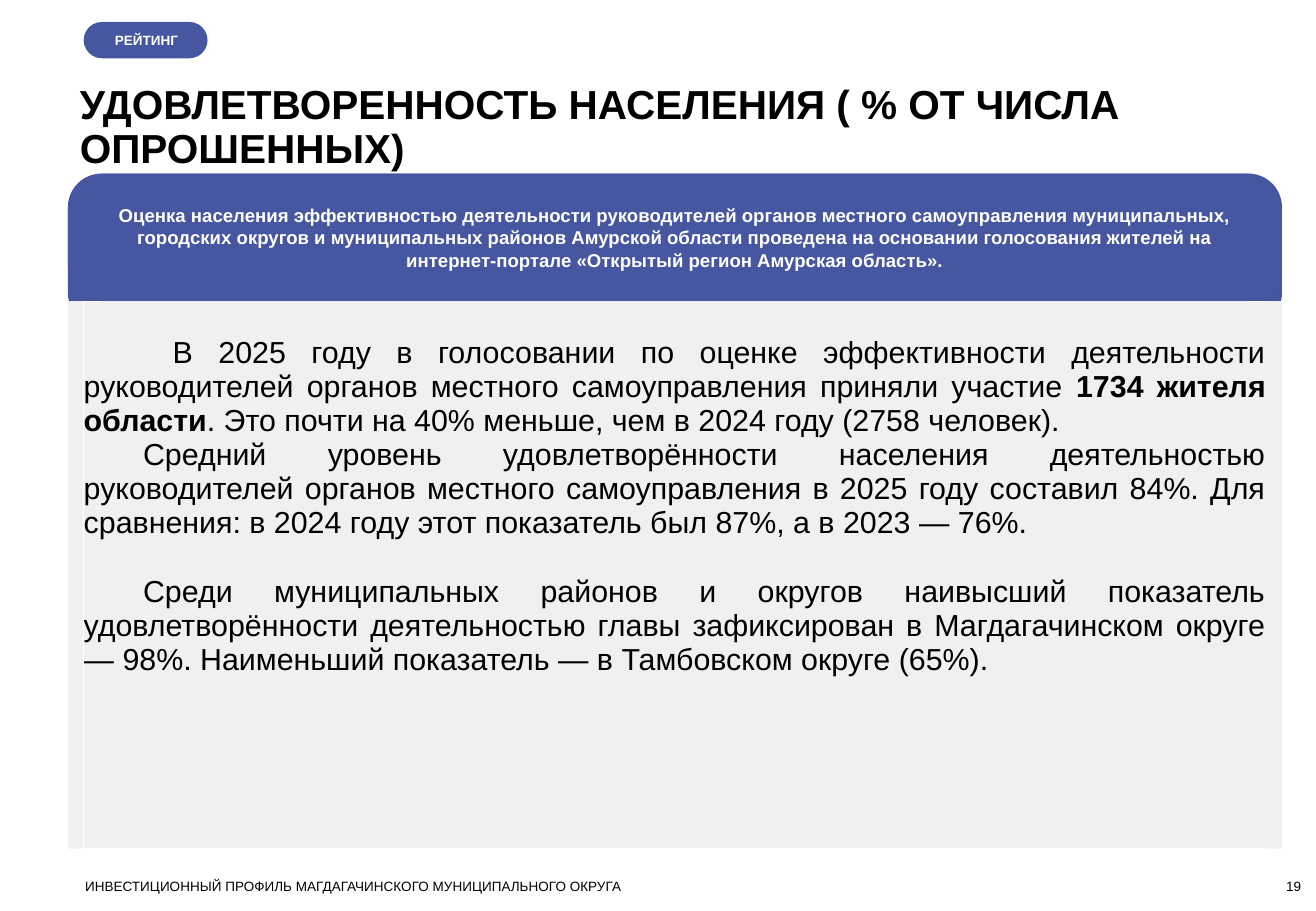
"""Builds the slide on how satisfied residents are with local leaders."""
from lxml.etree import SubElement
from pptx import Presentation
from pptx.dml.color import RGBColor
from pptx.enum.shapes import MSO_SHAPE
from pptx.enum.text import MSO_ANCHOR, PP_ALIGN
from pptx.oxml.ns import qn
from pptx.util import Cm, Pt

COLORS = {"blue": "4756A0", "deep": "46559F", "grey": "F0F0F0",
          "white": "FFFFFF", "black": "000000"}
FONT = "Arial"
TAG = "РЕЙТИНГ"
TITLE = "УДОВЛЕТВОРЕННОСТЬ НАСЕЛЕНИЯ ( % ОТ ЧИСЛА ОПРОШЕННЫХ)"
FOOTER = "ИНВЕСТИЦИОННЫЙ ПРОФИЛЬ МАГДАГАЧИНСКОГО МУНИЦИПАЛЬНОГО ОКРУГА"
PAGE = "19"
INTRO = ("Оценка населения эффективностью деятельности руководителей органов "
         "местного самоуправления муниципальных, городских округов и "
         "муниципальных районов Амурской области проведена на основании "
         "голосования жителей на интернет-портале «Открытый регион Амурская "
         "область».")
BODY = [
    {"indent": 1.86, "before": 0, "parts": [
        ("В 2025 году в голосовании по оценке эффективности деятельности "
         "руководителей органов местного самоуправления приняли участие ", False),
        ("1734 жителя области", True),
        (". Это почти на 40% меньше, чем в 2024 году (2758 человек).", False)]},
    {"indent": 1.24, "before": 0, "parts": [
        ("Средний уровень удовлетворённости населения деятельностью "
         "руководителей органов местного самоуправления в 2025 году составил "
         "84%. Для сравнения: в 2024 году этот показатель был 87%, а в 2023 — "
         "76%.", False)]},
    {"indent": 1.24, "before": 20.5, "parts": [
        ("Среди муниципальных районов и округов наивысший показатель "
         "удовлетворённости деятельностью главы зафиксирован в Магдагачинском "
         "округе — 98%. Наименьший показатель — в Тамбовском округе (65%).",
         False)]},
]
LEFT, WIDTH = 1.42, 25.38
TOP, SPLIT, BOTTOM = 3.63, 6.3, 17.75
INSET = (0.25, 0.13, 0.25, 0.13)
NONE = (0, 0, 0, 0)


def paint(font, size, color, bold=False):
    font.name, font.size, font.bold = FONT, Pt(size), bold
    font.color.rgb = RGBColor.from_string(COLORS[color])


def block(slide, kind, box, color, round_by=None):
    shape = slide.shapes.add_shape(kind, *map(Cm, box))
    shape.shadow.inherit = False
    shape.fill.solid()
    shape.fill.fore_color.rgb = RGBColor.from_string(COLORS[color])
    shape.line.fill.background()
    if round_by is not None:
        shape.adjustments[0] = round_by
    return shape


def write(shape, text, size, color, bold=False, align=PP_ALIGN.LEFT,
          anchor=MSO_ANCHOR.MIDDLE, inset=INSET, lead=None):
    frame = shape.text_frame
    frame.word_wrap = True
    frame.vertical_anchor = anchor
    (frame.margin_left, frame.margin_top,
     frame.margin_right, frame.margin_bottom) = map(Cm, inset)
    frame.text = text
    para = frame.paragraphs[0]
    para.alignment, para.line_spacing = align, lead
    paint(para.runs[0].font, size, color, bold)


def label(slide, box, text, size, **style):
    write(slide.shapes.add_textbox(*map(Cm, box)), text, size, "black", **style)


def border(cell):
    props = cell._tc.get_or_add_tcPr()
    for spot, side in enumerate(("lnL", "lnR", "lnT", "lnB")):
        line = SubElement(props, qn("a:" + side), w=str(Pt(1)))
        if side == "lnR":
            SubElement(line, qn("a:noFill"))
        else:
            fill = SubElement(line, qn("a:solidFill"))
            SubElement(fill, qn("a:srgbClr"), val=COLORS["white"])
        props.insert(spot, line)


def report(slide):
    box = (1.75, SPLIT, 24.71, BOTTOM - SPLIT)
    table = slide.shapes.add_table(1, 1, *map(Cm, box)).table
    table.first_row = table.horz_banding = False
    cell = table.cell(0, 0)
    cell.fill.background()
    border(cell)
    cell.margin_left = cell.margin_right = cell.margin_bottom = 0
    cell.margin_top = Cm(0.73)
    frame = cell.text_frame
    for spot, item in enumerate(BODY):
        para = frame.add_paragraph() if spot else frame.paragraphs[0]
        para.alignment = PP_ALIGN.JUSTIFY
        para._p.get_or_add_pPr().set("indent", str(Cm(item["indent"])))
        if item["before"]:
            para.space_before = Pt(item["before"])
        for text, bold in item["parts"]:
            run = para.add_run()
            run.text = text
            paint(run.font, 18, "black", bold)


def main():
    deck = Presentation()
    deck.slide_width, deck.slide_height = Cm(27.51), Cm(19.05)
    slide = deck.slides.add_slide(deck.slide_layouts[6])
    pill = MSO_SHAPE.ROUNDED_RECTANGLE

    tag = block(slide, pill, (1.75, 0.46, 2.59, 0.76), "blue", 0.5)
    write(tag, TAG, 8, "white", bold=True, inset=(0.54, 0, 0, 0))
    label(slide, (1.78, 18.36, 20.32, 0.33), FOOTER, 8,
          anchor=MSO_ANCHOR.TOP, inset=NONE)
    label(slide, (25.17, 18.36, 2.03, 0.33), PAGE, 8, align=PP_ALIGN.RIGHT,
          anchor=MSO_ANCHOR.BOTTOM, inset=NONE)
    label(slide, (LEFT, 0.84, 23.72, 3.68), TITLE, 24, bold=True, lead=0.9)

    block(slide, pill, (LEFT, TOP, WIDTH, 3.2), "deep", 0.22)
    block(slide, MSO_SHAPE.RECTANGLE,
          (LEFT, SPLIT, WIDTH, BOTTOM - SPLIT), "grey")
    report(slide)
    banner = block(slide, pill, (LEFT, TOP, WIDTH, SPLIT - TOP), "blue", 0.29)
    write(banner, INTRO, 11, "white", bold=True, align=PP_ALIGN.CENTER)
    deck.save("out.pptx")


if __name__ == "__main__":
    main()
